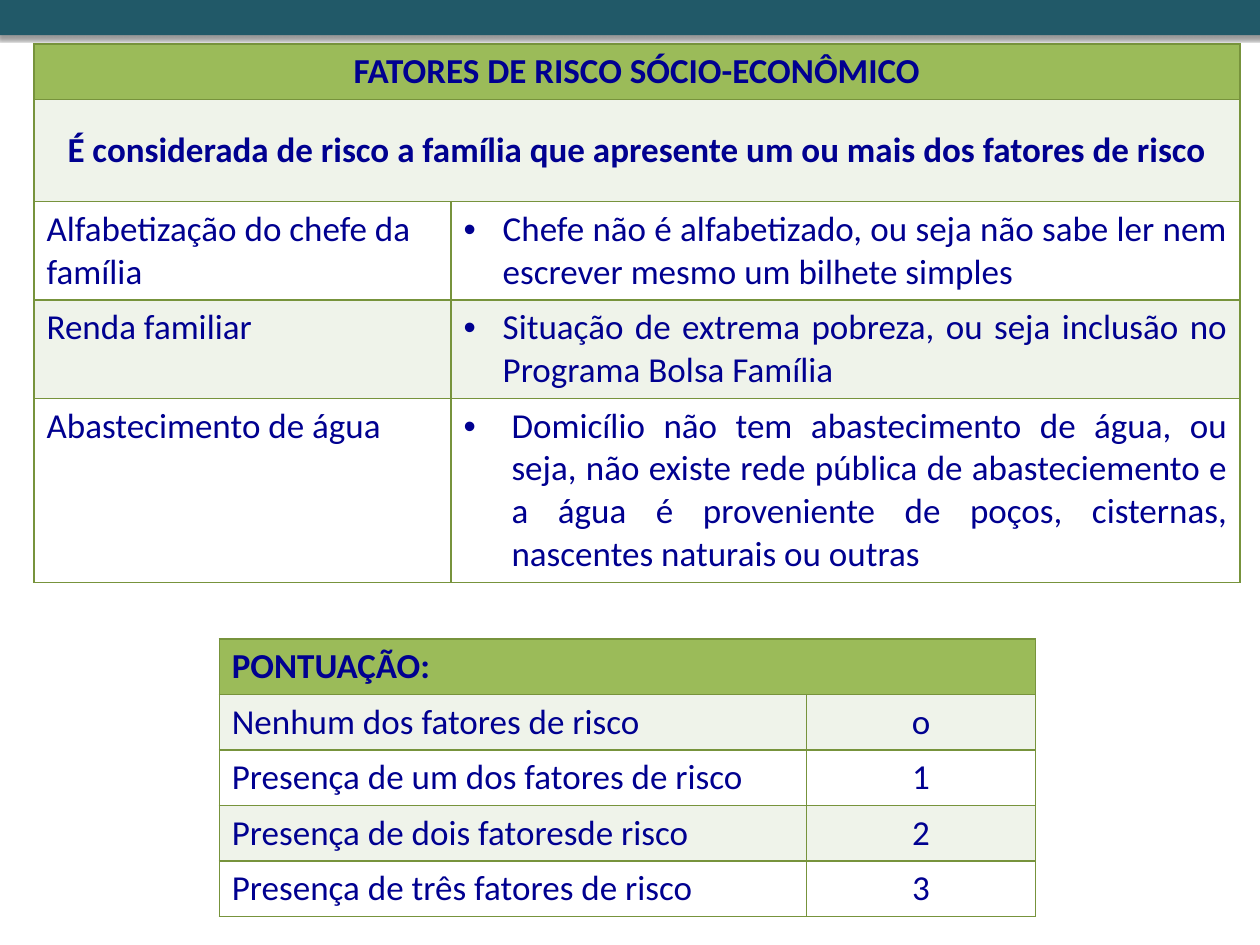
from dataclasses import dataclass
from typing import Any

import lxml.etree
import pptx
import pptx.dml.color
import pptx.enum.shapes
import pptx.enum.text
import pptx.oxml.ns
import pptx.util

Inches = pptx.util.Inches
Align = pptx.enum.text.PP_ALIGN
Anchor = pptx.enum.text.MSO_ANCHOR


@dataclass(frozen=True)
class Theme:
    font: str = "Calibri"
    size: int = 20
    ink: str = "000090"
    bar: str = "215968"
    head: str = "9BBB59"
    band: str = "EFF3EA"
    plain: str = "FFFFFF"
    edge: str = "77933C"
    line: int = 1


@dataclass(frozen=True)
class Cell:
    text: str
    align: Any = Align.LEFT
    anchor: Any = Anchor.TOP
    bold: bool = False
    hang: float = 0


@dataclass(frozen=True)
class Grid:
    left: float
    top: float
    cols: tuple[float, ...]
    rows: tuple[float, ...]
    cells: tuple[tuple[Cell, ...], ...]


THEME = Theme()


def color(code: str) -> Any:
    return pptx.dml.color.RGBColor.from_string(code)


def apply(item: Any, form: dict[str, Any]) -> None:
    for name, value in form.items():
        setattr(item, name, value)


def add(node: Any, tag: str, **attrs: Any) -> Any:
    values = {name: str(value) for name, value in attrs.items()}
    return lxml.etree.SubElement(node, pptx.oxml.ns.qn(tag), values)


def draw_bar(slide: Any) -> None:
    kind = pptx.enum.shapes.MSO_SHAPE.RECTANGLE
    bar = slide.shapes.add_shape(kind, Inches(-0.02), 0, Inches(10.04), Inches(0.28))
    bar.fill.solid()
    bar.fill.fore_color.rgb = color(THEME.bar)
    bar.line.fill.background()
    bar.shadow.inherit = False
    effects = bar._element.spPr.find(pptx.oxml.ns.qn("a:effectLst"))
    blur = pptx.util.Pt(2)
    shade = add(effects, "a:outerShdw", blurRad=blur, dist=blur, dir=90 * 60000, rotWithShape=0)
    add(add(shade, "a:srgbClr", val="000000"), "a:alpha", val=40000)


def draw_edges(box: Any) -> None:
    props = box._tc.get_or_add_tcPr()
    for side in "LRTB":
        line = add(props, f"a:ln{side}", w=pptx.util.Pt(THEME.line))
        add(add(line, "a:solidFill"), "a:srgbClr", val=THEME.edge)


def add_bullet(par: Any, hang: float) -> None:
    props = par._p.get_or_add_pPr()
    props.set("marL", str(Inches(hang)))
    props.set("indent", str(Inches(-hang)))
    add(props, "a:buFont", typeface="Arial")
    add(props, "a:buChar", char="•")


def fill_cell(box: Any, cell: Cell) -> None:
    box.vertical_anchor = cell.anchor
    par = box.text_frame.paragraphs[0]
    par.alignment = cell.align
    if cell.hang:
        add_bullet(par, cell.hang)
    run = par.add_run()
    run.text = cell.text
    apply(run.font, {"name": THEME.font, "size": pptx.util.Pt(THEME.size), "bold": cell.bold})
    run.font.color.rgb = color(THEME.ink)


def draw_grid(slide: Any, grid: Grid) -> None:
    frame = slide.shapes.add_table(
        len(grid.rows), len(grid.cols), Inches(grid.left), Inches(grid.top),
        Inches(sum(grid.cols)), Inches(sum(grid.rows)),
    )
    table = frame.table
    apply(table, {"first_row": False, "horz_banding": False})
    for col, width in zip(table.columns, grid.cols):
        col.width = Inches(width)
    for r, (height, cells) in enumerate(zip(grid.rows, grid.cells)):
        table.rows[r].height = Inches(height)
        tone = THEME.head if r == 0 else (THEME.plain, THEME.band)[r % 2]
        for c in range(len(grid.cols)):
            box = table.cell(r, c)
            draw_edges(box)
            box.fill.solid()
            box.fill.fore_color.rgb = color(tone)
        if len(cells) < len(grid.cols):
            table.cell(r, 0).merge(table.cell(r, len(grid.cols) - 1))
        for c, cell in enumerate(cells):
            fill_cell(table.cell(r, c), cell)


def point(text: str, hang: float = 0.31) -> Cell:
    return Cell(text, Align.JUSTIFY, hang=hang)


def score(text: str) -> Cell:
    return Cell(text, Align.CENTER, Anchor.MIDDLE)


RISKS = Grid(0.27, 0.35, (3.31, 6.26), (0.44, 0.81, 0.78, 0.78, 1.46), (
    (Cell("FATORES DE RISCO SÓCIO-ECONÔMICO", Align.CENTER, bold=True),),
    (Cell("É considerada de risco a família que apresente um ou mais dos fatores de risco",
          Align.CENTER, Anchor.MIDDLE, True),),
    (Cell("Alfabetização do chefe da família"),
     point("Chefe não é alfabetizado, ou seja não sabe ler nem escrever mesmo um bilhete simples")),
    (Cell("Renda familiar"),
     point("Situação de extrema pobreza, ou seja inclusão no Programa Bolsa Família")),
    (Cell("Abastecimento de água"),
     point("Domicílio não tem abastecimento de água, ou seja, não existe rede pública de "
           "abasteciemento e a água é proveniente de poços, cisternas, nascentes naturais "
           "ou outras", 0.38)),
))

SCORES = Grid(1.74, 5.07, (4.66, 1.82), (0.44,) * 5, (
    (Cell("PONTUAÇÃO:", bold=True),),
    (Cell("Nenhum dos fatores de risco"), score("o")),
    (Cell("Presença de um dos fatores de risco"), score("1")),
    (Cell("Presença de dois fatoresde risco"), score("2")),
    (Cell("Presença de três fatores de risco"), score("3")),
))


def main() -> None:
    deck = pptx.Presentation()
    apply(deck, {"slide_width": Inches(10), "slide_height": Inches(7.5)})
    slide = deck.slides.add_slide(deck.slide_layouts[6])
    draw_bar(slide)
    for grid in (RISKS, SCORES):
        draw_grid(slide, grid)
    deck.save("out.pptx")


if __name__ == "__main__":
    main()
